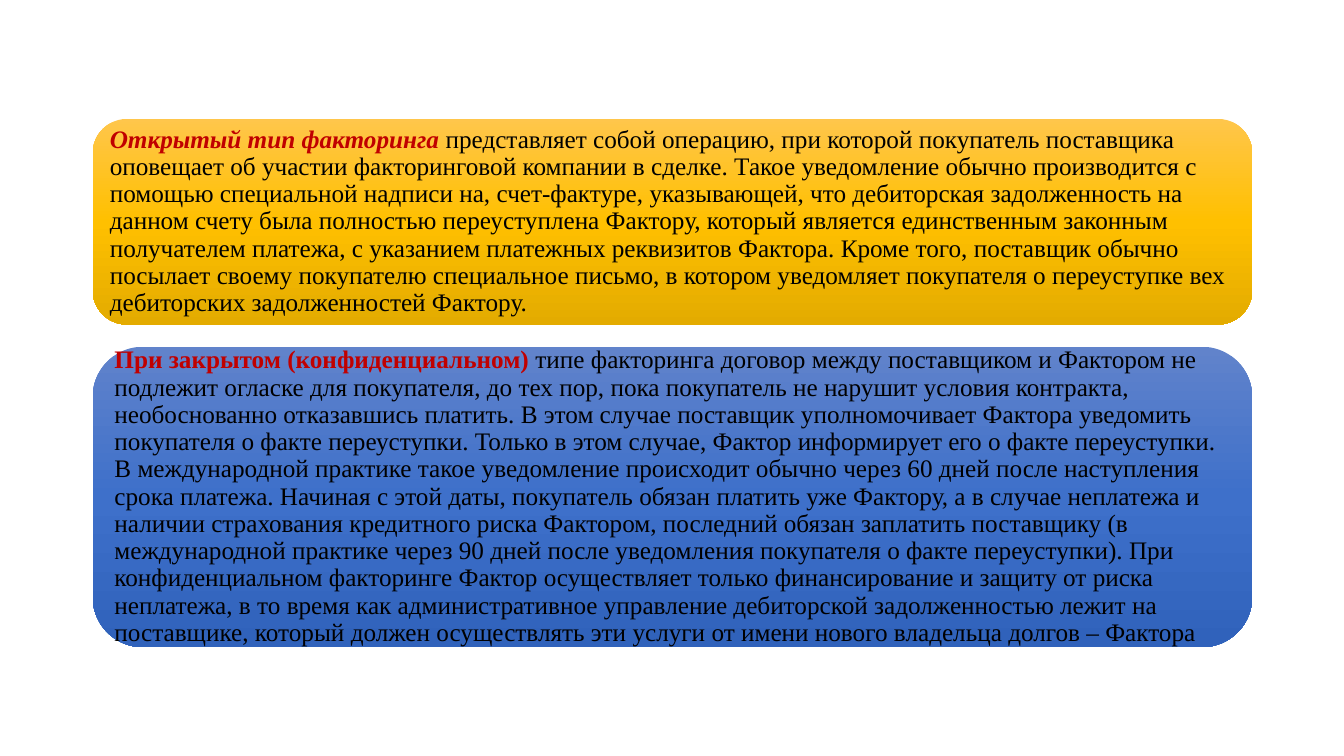
import copy

import pptx
import pptx.dml.color
import pptx.enum.shapes
import pptx.enum.text
import pptx.oxml.ns
import pptx.util

RGBColor = pptx.dml.color.RGBColor
Inches = pptx.util.Inches

BLACK = RGBColor(0x00, 0x00, 0x00)
RED = RGBColor(0xC0, 0x00, 0x00)
GOLD = (RGBColor(0xFF, 0xC6, 0x4B), RGBColor(0xFF, 0xC0, 0x00), RGBColor(0xE3, 0xAB, 0x00))
BLUE = (RGBColor(0x61, 0x83, 0xCB), RGBColor(0x3E, 0x70, 0xCA), RGBColor(0x30, 0x62, 0xBB))

OPEN_TERM = "Открытый тип факторинга "
OPEN_SENTENCES = [
    "представляет собой операцию, при которой покупатель поставщика оповещает об участии "
    "факторинговой компании в сделке.",
    "Такое уведомление обычно производится с помощью специальной надписи на, счет-фактуре, "
    "указывающей, что дебиторская задолженность на данном счету была полностью переуступлена "
    "Фактору, который является единственным законным получателем платежа, с указанием "
    "платежных реквизитов Фактора.",
    "Кроме того, поставщик обычно посылает своему покупателю специальное письмо, в котором "
    "уведомляет покупателя о переуступке вех дебиторских задолженностей Фактору.",
]
CLOSED_TERM = "При закрытом (конфиденциальном) "
CLOSED_SENTENCES = [
    "типе факторинга договор между поставщиком и Фактором не подлежит огласке для покупателя, "
    "до тех пор, пока покупатель не нарушит условия контракта, необоснованно отказавшись "
    "платить.",
    "В этом случае поставщик уполномочивает Фактора уведомить покупателя о факте переуступки.",
    "Только в этом случае, Фактор информирует его о факте переуступки.",
    "В международной практике такое уведомление происходит обычно через 60 дней после "
    "наступления срока платежа.",
    "Начиная с этой даты, покупатель обязан платить уже Фактору, а в случае неплатежа и "
    "наличии страхования кредитного риска Фактором, последний обязан заплатить поставщику "
    "(в международной практике через 90 дней после уведомления покупателя о факте "
    "переуступки).",
    "При конфиденциальном факторинге Фактор осуществляет только финансирование и защиту от "
    "риска неплатежа, в то время как административное управление дебиторской задолженностью "
    "лежит на поставщике, который должен осуществлять эти услуги от имени нового владельца "
    "долгов – Фактора",
]


def fill_downward(shape, colors):
    shape.fill.gradient()
    shape.fill.gradient_angle = 270
    stop_list = shape.element.spPr.find(".//" + pptx.oxml.ns.qn("a:gsLst"))
    stop_list.append(copy.deepcopy(stop_list[0]))
    for stop, position, color in zip(shape.fill.gradient_stops, (0, 0.5, 1), colors):
        stop.position = position
        stop.color.rgb = color


def write_definition(shape, term, sentences, italic):
    frame = shape.text_frame
    frame.word_wrap = True
    frame.vertical_anchor = pptx.enum.text.MSO_ANCHOR.MIDDLE
    frame.margin_left = frame.margin_right = Inches(0.07)
    frame.margin_top = frame.margin_bottom = Inches(0.07)
    paragraph = frame.paragraphs[0]
    paragraph.alignment = pptx.enum.text.PP_ALIGN.LEFT
    paragraph.line_spacing = 0.9
    paragraph.font.name = "Times New Roman"
    paragraph.font.size = pptx.util.Pt(18)
    term_run = paragraph.add_run()
    term_run.text = term
    term_run.font.bold = True
    term_run.font.italic = italic
    term_run.font.color.rgb = RED
    text_run = paragraph.add_run()
    text_run.text = " ".join(sentences)
    text_run.font.color.rgb = BLACK


def add_panel(slide, top, height, colors, term, sentences, italic=False):
    panel = slide.shapes.add_shape(
        pptx.enum.shapes.MSO_SHAPE.ROUNDED_RECTANGLE,
        Inches(0.92), Inches(top), Inches(11.5), Inches(height),
    )
    panel.shadow.inherit = False
    panel.line.fill.background()
    fill_downward(panel, colors)
    write_definition(panel, term, sentences, italic)


def main():
    presentation = pptx.Presentation()
    presentation.slide_width = Inches(13.33)
    presentation.slide_height = Inches(7.5)
    slide = presentation.slides.add_slide(presentation.slide_layouts[6])
    add_panel(slide, 1.18, 2.04, GOLD, OPEN_TERM, OPEN_SENTENCES, italic=True)
    add_panel(slide, 3.44, 2.98, BLUE, CLOSED_TERM, CLOSED_SENTENCES)
    presentation.save("out.pptx")


if __name__ == "__main__":
    main()
